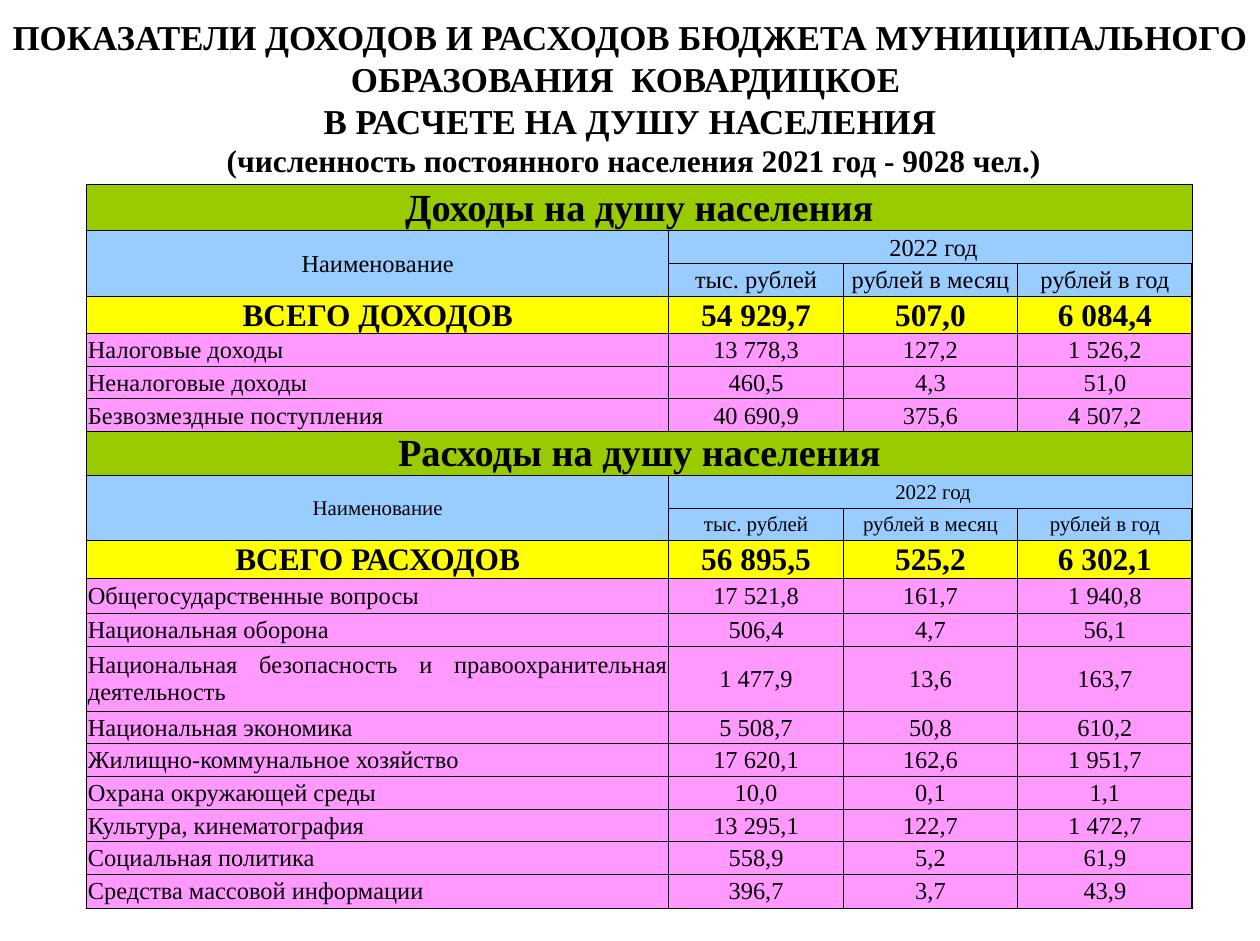
from lxml import etree
from pptx import Presentation
from pptx.dml.color import RGBColor
from pptx.enum import text
from pptx.oxml import ns
from pptx.util import Inches, Pt

FONT = "Times New Roman"
BLACK = RGBColor(0x00, 0x00, 0x00)
GREEN = RGBColor(0x99, 0xCC, 0x00)
BLUE = RGBColor(0x99, 0xCC, 0xFF)
YELLOW = RGBColor(0xFF, 0xFF, 0x00)
PINK = RGBColor(0xFF, 0x99, 0xFF)

CENTER, JUSTIFY = text.PP_ALIGN.CENTER, text.PP_ALIGN.JUSTIFY

TITLE_LINES = [
    ("ПОКАЗАТЕЛИ ДОХОДОВ И РАСХОДОВ БЮДЖЕТА МУНИЦИПАЛЬНОГО "
     "ОБРАЗОВАНИЯ  КОВАРДИЦКОЕ ", 20),
    ("В РАСЧЕТЕ НА ДУШУ НАСЕЛЕНИЯ", 20),
    (" (численность постоянного населения 2021 год - 9028 чел.)", 18),
]

# Each section: heading, header size, total, items
SECTIONS = [
    ("Доходы на душу населения", 14,
     ("ВСЕГО ДОХОДОВ", "54 929,7", "507,0", "6 084,4"),
     [("Налоговые доходы", "13 778,3", "127,2", "1 526,2"),
      ("Неналоговые доходы", "460,5", "4,3", "51,0"),
      ("Безвозмездные поступления", "40 690,9", "375,6", "4 507,2")]),
    ("Расходы на душу населения", 12,
     ("ВСЕГО РАСХОДОВ", "56 895,5", "525,2", "6 302,1"),
     [("Общегосударственные вопросы", "17 521,8", "161,7", "1 940,8"),
      ("Национальная оборона", "506,4", "4,7", "56,1"),
      ("Национальная безопасность и правоохранительная деятельность",
       "1 477,9", "13,6", "163,7"),
      ("Национальная экономика", "5 508,7", "50,8", "610,2"),
      ("Жилищно-коммунальное хозяйство", "17 620,1", "162,6", "1 951,7"),
      ("Охрана окружающей среды", "10,0", "0,1", "1,1"),
      ("Культура, кинематография", "13 295,1", "122,7", "1 472,7"),
      ("Социальная политика", "558,9", "5,2", "61,9"),
      ("Средства массовой информации", "396,7", "3,7", "43,9")]),
]
UNITS = ("", "тыс. рублей", "рублей в месяц", "рублей в год")
COLUMN_WIDTHS = [4.64, 1.39, 1.39, 1.39]
ROW_HEIGHTS = [0.37, 0.26, 0.26, 0.3, 0.26, 0.26, 0.26,
               0.35, 0.26, 0.26, 0.3, 0.28, 0.26, 0.52] + [0.26] * 5 + [0.27]


def add_run(paragraph, words, size, bold):
    run = paragraph.add_run()
    run.text = words
    run.font.name = FONT
    run.font.size = Pt(size)
    run.font.bold = bold
    run.font.color.rgb = BLACK


def fill_title(title, left, top, width, height):
    title.left, title.top = Inches(left), Inches(top)
    title.width, title.height = Inches(width), Inches(height)
    frame = title.text_frame
    frame.word_wrap = True
    frame.auto_size = text.MSO_AUTO_SIZE.NONE
    frame.vertical_anchor = text.MSO_ANCHOR.MIDDLE
    frame.margin_left = frame.margin_right = Inches(0.08)
    paragraph = frame.paragraphs[0]
    paragraph.alignment = CENTER
    for number, (words, size) in enumerate(TITLE_LINES):
        if number:
            paragraph.add_line_break()
        add_run(paragraph, words, size, True)


def set_borders(cell, widths):
    properties = cell._tc.get_or_add_tcPr()
    for side, width in zip("LRTB", widths):
        line = etree.SubElement(properties, ns.qn(f"a:ln{side}"), w=str(Pt(width)))
        fill = etree.SubElement(line, ns.qn("a:solidFill"))
        etree.SubElement(fill, ns.qn("a:srgbClr"), val=str(BLACK))


def fill_row(table, row, words, color, size, bold=False, first_align=CENTER):
    for column, entry in enumerate(words):
        cell = table.cell(row, column)
        # Thicker outline on the left, right and top of the table
        last_column = column == len(COLUMN_WIDTHS) - 1
        set_borders(cell, (0.5 if column else 1, 1 if last_column else 0.5,
                           0.5 if row else 1, 0.5))
        cell.fill.solid()
        cell.fill.fore_color.rgb = color
        cell.margin_left = cell.margin_right = cell.margin_top = Inches(0.01)
        cell.margin_bottom = 0
        cell.vertical_anchor = text.MSO_ANCHOR.MIDDLE
        paragraph = cell.text_frame.paragraphs[0]
        paragraph.alignment = CENTER if column else first_align
        if entry:
            add_run(paragraph, entry, size, bold)


def fill_section(table, top_row, heading, header_size, total, items):
    # Heading and two-level header
    fill_row(table, top_row, (heading, "", "", ""), GREEN, 22, True)
    fill_row(table, top_row + 1, ("Наименование", " 2022 год", "", ""), BLUE, header_size)
    fill_row(table, top_row + 2, UNITS, BLUE, header_size)
    table.cell(top_row, 0).merge(table.cell(top_row, 3))
    table.cell(top_row + 1, 0).merge(table.cell(top_row + 2, 0))
    table.cell(top_row + 1, 1).merge(table.cell(top_row + 1, 3))
    # Total and its items
    fill_row(table, top_row + 3, total, YELLOW, 18, True)
    for row, item in enumerate(items, top_row + 4):
        fill_row(table, row, item, PINK, 14, first_align=JUSTIFY)
    return top_row + 4 + len(items)


def add_budget_table(slide, left, top):
    table = slide.shapes.add_table(
        len(ROW_HEIGHTS), len(COLUMN_WIDTHS), Inches(left), Inches(top),
        Inches(sum(COLUMN_WIDTHS)), Inches(sum(ROW_HEIGHTS))).table
    table.first_row = table.horz_banding = False
    for column, width in zip(table.columns, COLUMN_WIDTHS):
        column.width = Inches(width)
    for row, height in zip(table.rows, ROW_HEIGHTS):
        row.height = Inches(height)
    next_row = 0
    for section in SECTIONS:
        next_row = fill_section(table, next_row, *section)


def main():
    deck = Presentation()
    deck.slide_width, deck.slide_height = Inches(10.04), Inches(7.5)
    slide = deck.slides.add_slide(deck.slide_layouts[5])
    fill_title(slide.shapes.title, 0, 0.16, 10.04, 1.23)
    add_budget_table(slide, 0.69, 1.47)
    deck.save("out.pptx")


if __name__ == "__main__":
    main()
